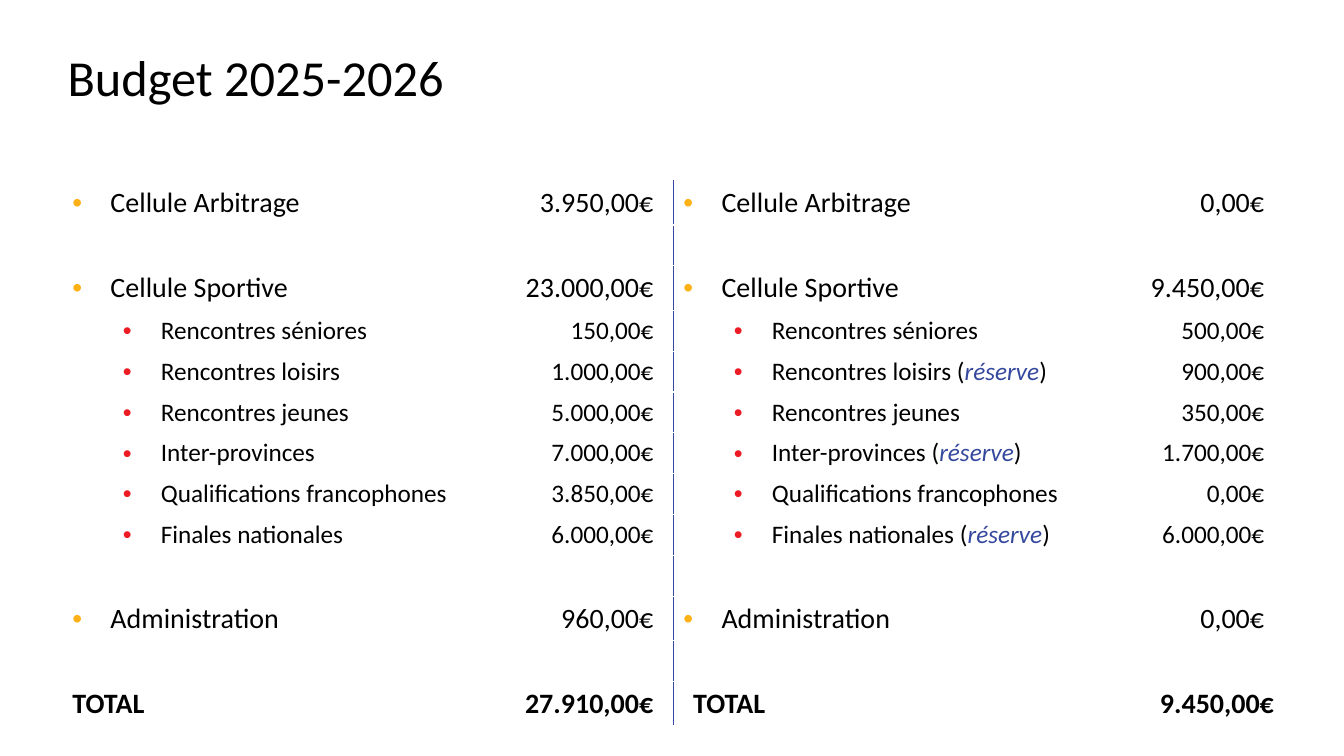
from dataclasses import dataclass

from lxml import etree
from pptx import Presentation
from pptx.dml.color import RGBColor
from pptx.enum import text
from pptx.oxml import ns
from pptx.util import Cm, Pt


@dataclass(frozen=True)
class Theme:
    font: str = "Calibri"
    ink: str = "000000"
    accent: str = "34489E"
    section_bullet: str = "FCB116"
    detail_bullet: str = "ED1C24"
    title_size: int = 36
    section_size: int = 20
    detail_size: int = 18
    divider_width: int = 1


THEME = Theme()
RESERVE = "réserve"

BUDGET = [
    ("section", "Cellule Arbitrage", "3.950,00€", "Cellule Arbitrage", "0,00€"),
    None,
    ("section", "Cellule Sportive", "23.000,00€", "Cellule Sportive", "9.450,00€"),
    ("detail", "Rencontres séniores", "150,00€", "Rencontres séniores", "500,00€"),
    ("detail", "Rencontres loisirs", "1.000,00€", "Rencontres loisirs (réserve)", "900,00€"),
    ("detail", "Rencontres jeunes", "5.000,00€", "Rencontres jeunes", "350,00€"),
    ("detail", "Inter-provinces", "7.000,00€", "Inter-provinces (réserve)", "1.700,00€"),
    ("detail", "Qualifications francophones", "3.850,00€", "Qualifications francophones", "0,00€"),
    ("detail", "Finales nationales", "6.000,00€", "Finales nationales (réserve)", "6.000,00€"),
    None,
    ("section", "Administration", "960,00€", "Administration", "0,00€"),
    None,
    ("total", "TOTAL", "27.910,00€", "TOTAL", "9.450,00€"),
]

ROW_STYLES = {
    "section": {"size": THEME.section_size, "bullet": THEME.section_bullet, "level": 0, "indent": 0.96},
    "detail": {"size": THEME.detail_size, "bullet": THEME.detail_bullet, "level": 1, "indent": 2.23},
    "total": {"size": THEME.section_size, "bullet": None, "level": 0, "indent": 0},
}


def apply(target, values):
    for name, value in values.items():
        setattr(target, name, value)


def add_run(paragraph, wording, size, color=THEME.ink, **emphasis):
    run = paragraph.add_run()
    run.text = wording
    apply(run.font, {"name": THEME.font, "size": Pt(size), **emphasis})
    run.font.color.rgb = RGBColor.from_string(color)


def add_bullet(paragraph, color, indent):
    properties = paragraph._p.get_or_add_pPr()
    properties.set("marL", str(Cm(indent)))
    properties.set("indent", str(-Cm(0.96)))
    bullet_color = etree.SubElement(properties, ns.qn("a:buClr"))
    etree.SubElement(bullet_color, ns.qn("a:srgbClr"), val=color)
    etree.SubElement(properties, ns.qn("a:buFont"), typeface="Arial")
    etree.SubElement(properties, ns.qn("a:buChar"), char="•")


def add_divider(cell, side):
    divider = etree.Element(ns.qn(f"a:{side}"), w=str(Pt(THEME.divider_width)))
    fill = etree.SubElement(divider, ns.qn("a:solidFill"))
    etree.SubElement(fill, ns.qn("a:srgbClr"), val=THEME.accent)
    cell._tc.get_or_add_tcPr().insert(0, divider)


def write_label(cell, label, style, bold):
    paragraph = cell.text_frame.paragraphs[0]
    paragraph.level = style["level"]
    if style["bullet"]:
        add_bullet(paragraph, style["bullet"], style["indent"])
    before, reserve, after = label.partition(RESERVE)
    add_run(paragraph, before, style["size"], bold=bold)
    if reserve:
        add_run(paragraph, reserve, style["size"], THEME.accent, italic=True)
        add_run(paragraph, after, style["size"])


def write_amount(cell, amount, style, bold):
    paragraph = cell.text_frame.paragraphs[0]
    paragraph.alignment = text.PP_ALIGN.RIGHT
    add_run(paragraph, amount, style["size"], bold=bold)
    cell.margin_right = Cm(0.5)


def place_title(slide, left, top, width, height):
    title = slide.shapes.title
    apply(title, {"left": Cm(left), "top": Cm(top), "width": Cm(width), "height": Cm(height)})
    title.text_frame.vertical_anchor = text.MSO_ANCHOR.MIDDLE
    paragraph = title.text_frame.paragraphs[0]
    apply(paragraph, {"alignment": text.PP_ALIGN.LEFT, "line_spacing": 0.9})
    add_run(paragraph, "Budget 2025-2026", THEME.title_size)


def place_budget(slide, left, top, column_widths, row_height):
    budget = slide.shapes.add_table(
        len(BUDGET), len(column_widths), Cm(left), Cm(top),
        Cm(sum(column_widths)), Cm(row_height * len(BUDGET)),
    ).table
    apply(budget, {"first_row": False, "horz_banding": False})
    for column, width in zip(budget.columns, column_widths):
        column.width = Cm(width)
    for row, entry in zip(budget.rows, BUDGET):
        row.height = Cm(row_height)
        for cell in row.cells:
            cell.fill.background()
        expense_label, expense, income_label, income = row.cells
        add_divider(expense, "lnR")
        add_divider(income_label, "lnL")
        if entry is None:
            continue
        kind, *wordings = entry
        is_total = kind == "total"
        writers = (write_label, write_amount) * 2
        for cell, write, wording in zip(row.cells, writers, wordings):
            write(cell, wording, ROW_STYLES[kind], is_total)
        if is_total:
            income_label.margin_left = Cm(0.5)
            income.margin_right = Cm(0.25)


def main():
    deck = Presentation()
    apply(deck, {"slide_width": Cm(33.87), "slide_height": Cm(19.05)})
    slide = deck.slides.add_slide(deck.slide_layouts[5])
    place_title(slide, 1.45, 1.02, 31.04, 2.01)
    place_budget(slide, 1.57, 4.55, (10.62, 4.78, 10.74, 4.65), 1.03)
    deck.save("out.pptx")


if __name__ == "__main__":
    main()
